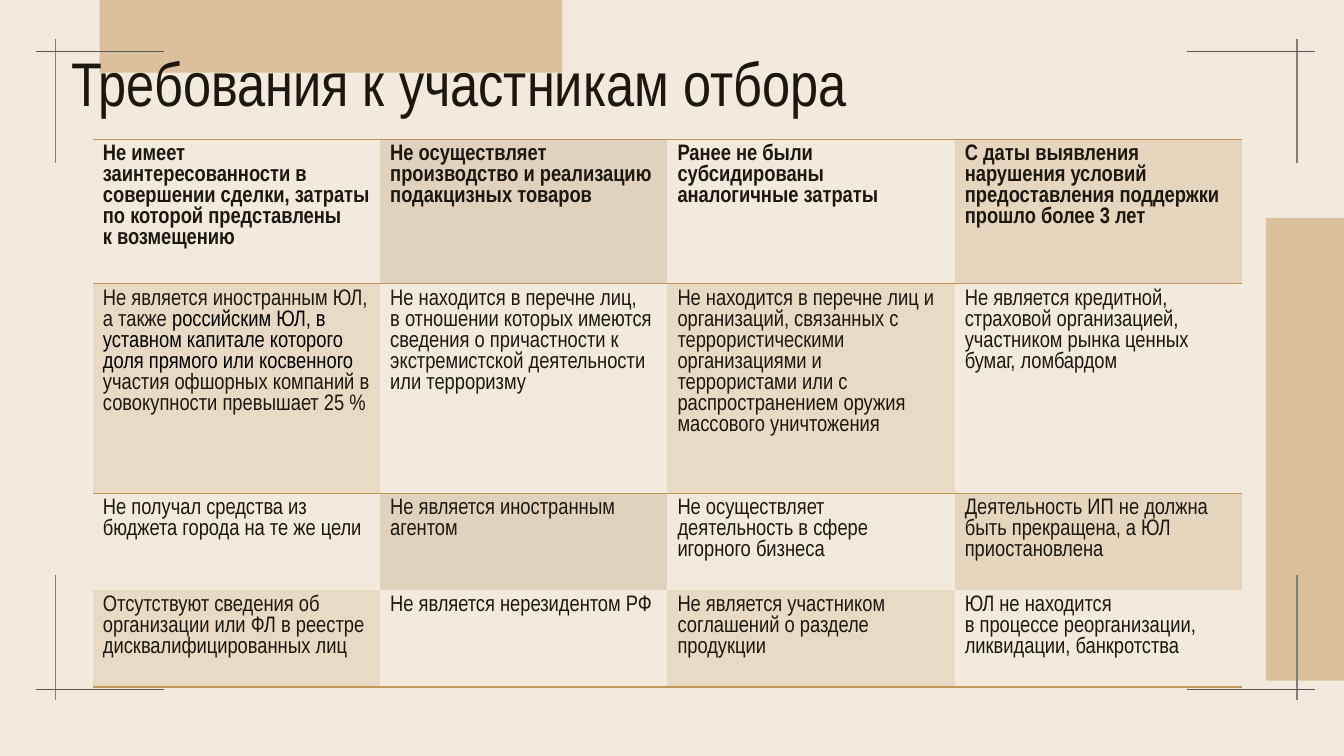
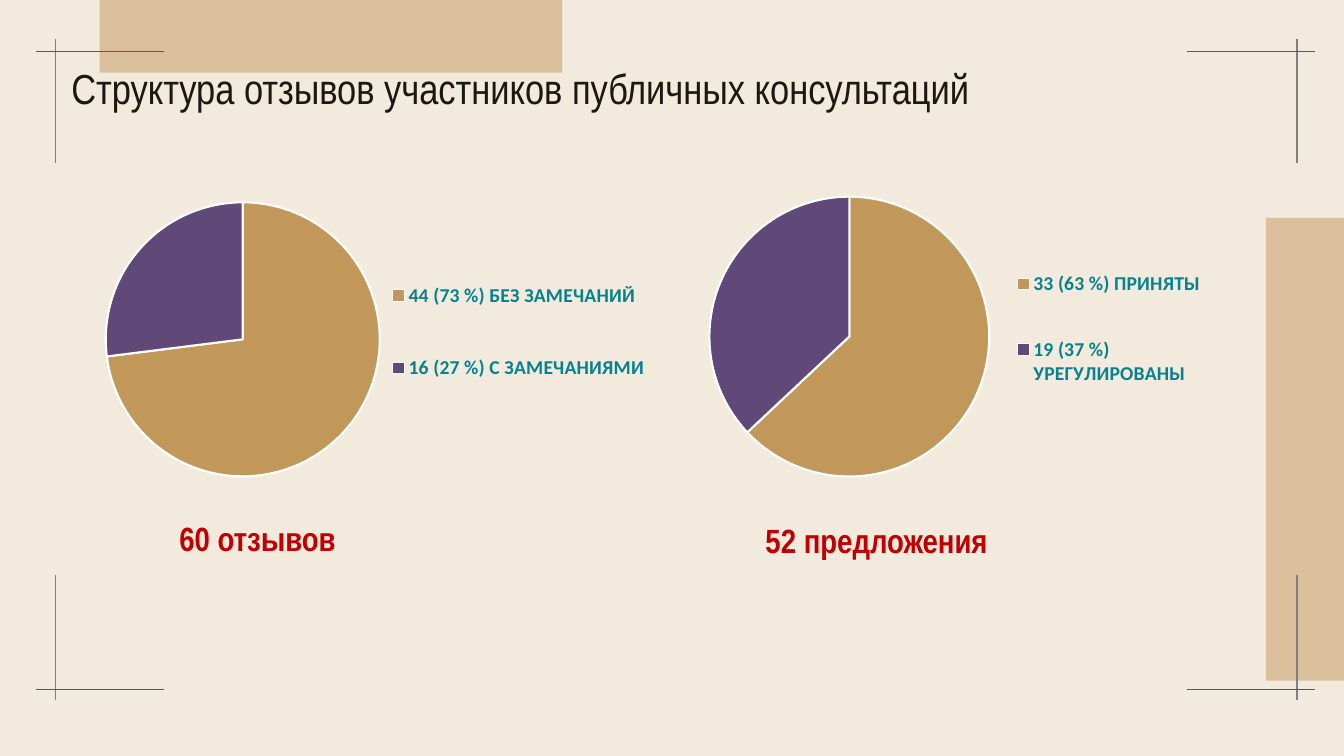
"""Builds two slides: selection requirements and the structure of feedback."""
import itertools

import lxml.etree
import pptx
import pptx.chart.data
import pptx.dml.color
import pptx.enum.chart
import pptx.enum.shapes
import pptx.enum.text
import pptx.oxml
import pptx.oxml.ns
import pptx.util

Cm, Pt = pptx.util.Cm, pptx.util.Pt
RGBColor = pptx.dml.color.RGBColor
qn = pptx.oxml.ns.qn

CREAM = RGBColor(0xF3, 0xEA, 0xDE)
SAND = RGBColor(0xDA, 0xC1, 0x9B)
GOLD = RGBColor(0xC1, 0x98, 0x59)
PURPLE = RGBColor(0x60, 0x48, 0x78)
TEAL = RGBColor(0x05, 0x82, 0x8C)
RED = RGBColor(0xC0, 0x00, 0x00)
INK = RGBColor(0x1B, 0x18, 0x10)
BLACK = RGBColor(0x00, 0x00, 0x00)
WHITE = RGBColor(0xFF, 0xFF, 0xFF)
GRAY = RGBColor(0x80, 0x80, 0x80)
DARK_GRAY = RGBColor(0x59, 0x59, 0x59)
EVEN_ROW_TINTS = [CREAM, RGBColor(0xE1, 0xD2, 0xBD), CREAM, RGBColor(0xE6, 0xD6, 0xBD)]
ODD_ROW_TINTS = [RGBColor(0xE9, 0xDA, 0xC3), CREAM] * 2
FONT, CHART_FONT = "Arial Narrow", "Calibri"
NO_TABLE_STYLE = "{2D5ABB26-0587-4C30-8999-92F81FD0307C}"

BANDS = [(31.9, 5.49, 1.97, 11.66), (2.51, 0, 11.66, 1.83)]
MARK_X, MARK_Y = (1.4, 32.69), (1.3, 17.37)
MARK_SPANS_X = [(0.91, 4.14), (29.92, 33.15)]
MARK_SPANS_Y = [(0.99, 4.11), (14.5, 17.63)]

REQUIREMENTS_TITLE = "Требования к участникам отбора"
REQUIREMENTS = [
    [
        "Не имеет заинтересованности в совершении сделки, затраты по которой представлены\nк возмещению",
        "Не осуществляет производство и реализацию подакцизных товаров",
        "Ранее не были субсидированы аналогичные затраты",
        "С даты выявления нарушения условий предоставления поддержки прошло более 3 лет",
    ],
    [
        [
            ("Не является иностранным ЮЛ, а также ", INK),
            ("российским ЮЛ, в уставном капитале которого доля прямого или косвенного ", BLACK),
            ("участия офшорных компаний в совокупности превышает 25 %", INK),
        ],
        "Не находится в перечне лиц,\nв отношении которых имеются сведения о причастности к экстремистской деятельности или терроризму",
        "Не находится в перечне лиц и организаций, связанных с террористическими организациями и террористами или с распространением оружия массового уничтожения",
        "Не является кредитной, страховой организацией, участником рынка ценных бумаг, ломбардом",
    ],
    [
        "Не получал средства из бюджета города на те же цели",
        "Не является иностранным агентом",
        "Не осуществляет деятельность в сфере игорного бизнеса",
        "Деятельность ИП не должна быть прекращена, а ЮЛ приостановлена",
    ],
    [
        "Отсутствуют сведения об организации или ФЛ в реестре дисквалифицированных лиц",
        "Не является нерезидентом РФ",
        "Не является участником соглашений о разделе продукции",
        "ЮЛ не находится\nв процессе реорганизации, ликвидации, банкротства",
    ],
]
ROW_HEIGHTS = [3.15, 5.28, 2.44, 2.44]
COLUMN_WIDTH = 7.24

FEEDBACK_TITLE = "Структура отзывов участников публичных консультаций"
PIES = [
    {
        "box": (1.22, 4.72, 15.8, 7.59),
        "plot": (0.09, 0.05, 0.44, 0.91),
        "legend": (0.53, 0.16, 0.44, 0.64),
        "slices": [("44 (73 %) БЕЗ ЗАМЕЧАНИЙ", 73), ("16 (27 %) С ЗАМЕЧАНИЯМИ", 27)],
        "total": "60 отзывов",
        "total_at": (2.26, 12.93),
    },
    {
        "box": (17.02, 4.57, 13.92, 7.75),
        "plot": (0.06, 0.05, 0.51, 0.91),
        "legend": (0.59, 0.16, 0.39, 0.64),
        "slices": [("33 (63 %) ПРИНЯТЫ", 63), ("19 (37 %) УРЕГУЛИРОВАНЫ", 37)],
        "total": "52 предложения",
        "total_at": (17.86, 12.98),
    },
]


def add_run(p, text, size, color=INK, bold=False):
    """Adds text to a paragraph, turning newlines into line breaks."""
    for i, line in enumerate(text.split("\n")):
        if i:
            p.add_line_break()
        r = p.add_run()
        r.text = line
        r.font.name, r.font.size, r.font.bold = FONT, Pt(size), bold
        r.font.color.rgb = color


def add_text(s, box, text, size, **style):
    """Adds a text box holding one run and returns its frame."""
    tf = s.shapes.add_textbox(*map(Cm, box)).text_frame
    tf.word_wrap = True
    add_run(tf.paragraphs[0], text, size, **style)
    return tf


def add_mark(s, x1, y1, x2, y2, color):
    """Adds one line of a corner mark."""
    line = s.shapes.add_connector(
        pptx.enum.shapes.MSO_CONNECTOR.STRAIGHT, Cm(x1), Cm(y1), Cm(x2), Cm(y2))
    line.line.color.rgb = color
    line.line.width = Pt(1)
    lxml.etree.SubElement(line._element.spPr, qn("a:effectLst"))


def add_slide(prs, title, size, top, height):
    """Adds a slide with the shared background, bands, marks and title."""
    s = prs.slides.add_slide(prs.slide_layouts[6])
    s.background.fill.solid()
    s.background.fill.fore_color.rgb = CREAM
    for box in BANDS:
        band = s.shapes.add_shape(pptx.enum.shapes.MSO_SHAPE.RECTANGLE, *map(Cm, box))
        band.shadow.inherit = False
        band.fill.solid()
        band.fill.fore_color.rgb = SAND
        band.line.fill.background()
    for x, (y1, y2) in itertools.product(MARK_X, MARK_SPANS_Y):
        add_mark(s, x, y1, x, y2, GRAY)
    for y, (x1, x2) in itertools.product(MARK_Y, MARK_SPANS_X):
        add_mark(s, x1, y, x2, y, DARK_GRAY)
    tf = add_text(s, (1.55, top, 29.21, height), title, size)
    tf.vertical_anchor = pptx.enum.text.MSO_ANCHOR.MIDDLE
    tf.paragraphs[0].line_spacing = 0.9
    return s


def set_borders(cell, sides):
    """Draws gold borders on the given sides of a cell, in schema order."""
    for i, side in enumerate(sides):
        cell._tc.get_or_add_tcPr().insert(i, pptx.oxml.parse_xml(
            f'<a:ln{side} {pptx.oxml.ns.nsdecls("a")} w="12700"><a:solidFill>'
            f'<a:srgbClr val="{GOLD}"/></a:solidFill></a:ln{side}>'))


def add_requirements(s):
    """Adds the table of requirements."""
    n_rows, n_cols = len(REQUIREMENTS), len(REQUIREMENTS[0])
    table = s.shapes.add_table(
        n_rows, n_cols, Cm(2.34), Cm(3.51),
        Cm(COLUMN_WIDTH * n_cols), Cm(sum(ROW_HEIGHTS))).table
    table.horz_banding = False
    table._tbl.tblPr.find(qn("a:tableStyleId")).text = NO_TABLE_STYLE
    for column in table.columns:
        column.width = Cm(COLUMN_WIDTH)
    borders = {0: "TB", 1: "T", n_rows - 1: "B"}
    for i, row in enumerate(REQUIREMENTS):
        table.rows[i].height = Cm(ROW_HEIGHTS[i])
        tints = ODD_ROW_TINTS if i % 2 else EVEN_ROW_TINTS
        for j, content in enumerate(row):
            cell = table.cell(i, j)
            cell.fill.solid()
            cell.fill.fore_color.rgb = tints[j]
            set_borders(cell, borders.get(i, ""))
            runs = [(content, INK)] if isinstance(content, str) else content
            for text, color in runs:
                add_run(cell.text_frame.paragraphs[0], text, 16, color, bold=i == 0)


def layout_xml(box, inner=False):
    """Returns a manual chart layout for a box given in fractions."""
    target = '<c:layoutTarget val="inner"/>' if inner else ""
    modes = "".join(f'<c:{k}Mode val="edge"/>' for k in "xy")
    sizes = "".join(f'<c:{k} val="{v}"/>' for k, v in zip("xywh", box))
    return pptx.oxml.parse_xml(
        f'<c:layout {pptx.oxml.ns.nsdecls("c")}><c:manualLayout>'
        f"{target}{modes}{sizes}</c:manualLayout></c:layout>")


def add_pie(s, pie):
    """Adds a pie chart with its legend and total."""
    data = pptx.chart.data.CategoryChartData()
    data.categories = [name for name, _ in pie["slices"]]
    data.add_series("Series 1", [value for _, value in pie["slices"]])
    chart = s.shapes.add_chart(
        pptx.enum.chart.XL_CHART_TYPE.PIE, *map(Cm, pie["box"]), data).chart
    chart.has_title = False
    chart.font.name, chart.font.size = CHART_FONT, Pt(10)
    plot = chart.plots[0]
    plot.vary_by_categories = True
    for i, color in enumerate([GOLD, PURPLE]):
        fmt = plot.series[0].points[i].format
        fmt.fill.solid()
        fmt.fill.fore_color.rgb = color
        fmt.line.color.rgb = WHITE
        fmt.line.width = Pt(1.5)
    chart.has_legend = True
    legend = chart.legend
    legend.position = pptx.enum.chart.XL_LEGEND_POSITION.RIGHT
    legend.include_in_layout = False
    font = legend.font
    font.name, font.size, font.bold = CHART_FONT, Pt(14), True
    font.color.rgb = TEAL
    area = chart._chartSpace.chart.plotArea
    for old in area.findall(qn("c:layout")):
        area.remove(old)
    area.insert(0, layout_xml(pie["plot"], inner=True))
    for old in legend._element.findall(qn("c:layout")):
        legend._element.remove(old)
    legend._element.find(qn("c:legendPos")).addnext(layout_xml(pie["legend"]))

    tf = add_text(s, (*pie["total_at"], 8.46, 1.14), pie["total"], 24, color=RED, bold=True)
    tf.margin_left = tf.margin_right = tf.margin_bottom = 0
    tf.paragraphs[0].alignment = pptx.enum.text.PP_ALIGN.CENTER


def main():
    """Builds and saves the presentation."""
    prs = pptx.Presentation()
    prs.slide_width, prs.slide_height = Cm(33.87), Cm(19.05)
    add_requirements(add_slide(prs, REQUIREMENTS_TITLE, 44, 1.07, 2.24))
    s = add_slide(prs, FEEDBACK_TITLE, 30, 0.46, 3.68)
    for pie in PIES:
        add_pie(s, pie)
    prs.save("out.pptx")


if __name__ == "__main__":
    main()
